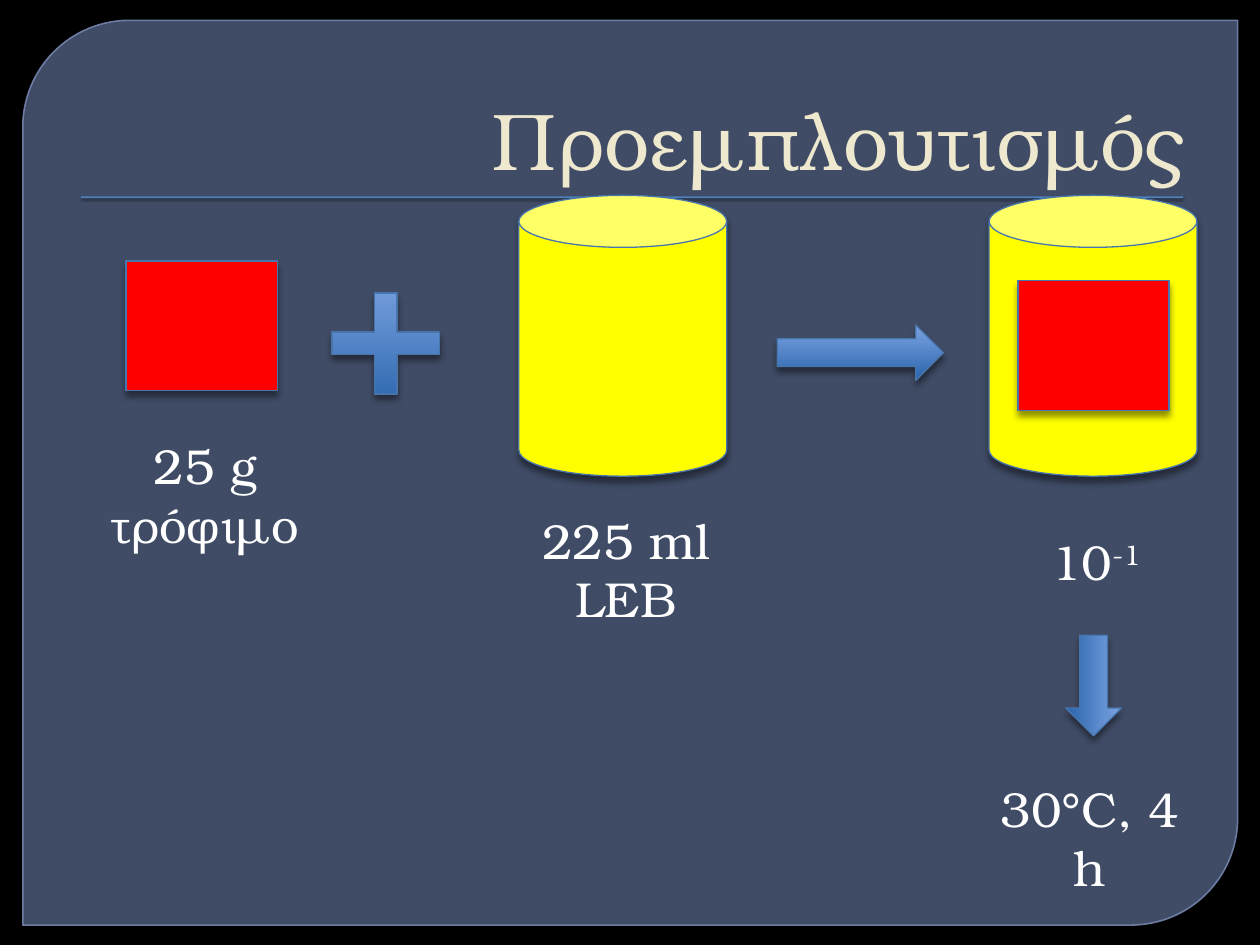
import copy
import pptx
import pptx.dml.color
import pptx.enum.shapes
import pptx.enum.text
import pptx.oxml
import pptx.oxml.ns
import pptx.util

Cm, Pt = pptx.util.Cm, pptx.util.Pt
kinds = pptx.enum.shapes.MSO_SHAPE
aligns = pptx.enum.text.PP_ALIGN
qn = pptx.oxml.ns.qn


def hue(code):
    return pptx.dml.color.RGBColor.from_string(code)


def form(home, kind, place, fill=None, edge="4875AC", cast=(4, 3, 43)):
    """Add a shape; no fill means the blue gradient, cast is blur, drop, percent."""
    shape = home.add_shape(kind, *[Cm(n) for n in place])
    if fill:
        shape.fill.solid()
        shape.fill.fore_color.rgb = hue(fill)
    else:
        shape.fill.gradient()
        shape.fill.gradient_angle = 90
        stops = shape.fill.gradient_stops
        for stop, code, spot in zip(stops, ("6592D3", "7BA1DE"), (0.72, 1)):
            stop.color.rgb = hue(code)
            stop.position = spot
        row = shape._element.spPr.find(".//" + qn("a:gsLst"))
        row.insert(0, copy.deepcopy(row[0]))
        base = shape.fill.gradient_stops[0]
        base.color.rgb = hue("2964AB")
        base.position = 0
    if edge:
        shape.line.color.rgb = hue(edge)
        shape.line.width = Pt(0.75)
    else:
        shape.line.fill.background()
    shape.shadow.inherit = False
    if cast:
        blur, drop, dark = cast
        shape._element.spPr.find(qn("a:effectLst")).append(pptx.oxml.parse_xml(
            '<a:outerShdw xmlns:a="http://schemas.openxmlformats.org/drawingml/2006/main"'
            f' blurRad="{Pt(blur)}" dist="{Pt(drop)}" dir="5400000" rotWithShape="0">'
            f'<a:srgbClr val="000000"><a:alpha val="{dark * 1000}"/></a:srgbClr>'
            '</a:outerShdw>'))
    return shape


deck = pptx.Presentation()
deck.slide_width, deck.slide_height = Cm(25.4), Cm(19.05)
slide = deck.slides.add_slide(deck.slide_layouts[6])
slide.background.fill.solid()
slide.background.fill.fore_color.rgb = hue("000000")
items = slide.shapes

# Panel with two round corners, partly clear
panel = form(items, kinds.ROUND_2_DIAG_RECTANGLE, (0.46, 0.41, 24.49, 18.24),
             "63759D", "7989B3", None)
panel.adjustments[0] = 0.118
panel.adjustments[1] = 0
panel.line.width = Pt(0.87)
for tint, part in zip(panel._element.spPr.iter(qn("a:srgbClr")), (65, 88)):
    tint.append(tint.makeelement(qn("a:alpha"), {"val": str(part * 1000)}))

# Rule under the title
form(items, kinds.RECTANGLE, (1.63, 3.96, 22.22, 0.03), "4F81BD", None, (1, 1, 75))

# Food plus broth
food, can = (3.05, 2.62), (4.19, 5.66)
form(items, kinds.RECTANGLE, (2.54, 5.26, *food), "FF0000")
plus = form(items, kinds.MATH_PLUS, (6.3, 5.54, 2.95, 2.77))
plus.adjustments[0] = 0.165
form(items, kinds.CAN, (10.46, 3.94, *can), "FFFF00")

# Food in the broth
mix = items.add_group_shape().shapes
form(mix, kinds.CAN, (19.94, 3.94, *can), "FFFF00")
form(mix, kinds.RECTANGLE, (20.52, 5.66, *food), "FF0000")

# Arrows
form(items, kinds.RIGHT_ARROW, (15.67, 6.55, 3.35, 1.12))
down = form(items, kinds.RIGHT_ARROW, (21.03, 13.26, 2.03, 1.12))
down.rotation = 90

# Title and labels; the second text is raised
texts = [
    ("Προεμπλουτισμός", "", (1.27, 0.71, 22.86, 3.18), 46, "EDE8CE"),
    ("25 g τρόφιμο", "", (1.98, 8.66, 4.32, 2.64), 28, "FFFFFF"),
    ("225 ml LEB", "", (10.46, 10.16, 4.32, 2.64), 28, "FFFFFF"),
    ("10", "-1", (19.94, 10.59, 4.32, 1.45), 28, "FFFFFF"),
    ("30°C, 4 h", "", (19.81, 15.57, 4.32, 1.45), 28, "FFFFFF"),
]
for text, power, place, size, code in texts:
    box = items.add_textbox(*[Cm(n) for n in place])
    frame = box.text_frame
    frame.word_wrap = True
    frame.text = text
    para = frame.paragraphs[0]
    para.alignment = aligns.CENTER
    if size == 46:
        para.alignment = aligns.RIGHT
        frame.vertical_anchor = pptx.enum.text.MSO_ANCHOR.BOTTOM
    if power:
        run = para.add_run()
        run.text = power
        run.font._element.set("baseline", "30000")
    for run in para.runs:
        run.font.name = "TeX Gyre Bonum"
        run.font.size = Pt(size)
        run.font.color.rgb = hue(code)

deck.save("out.pptx")
